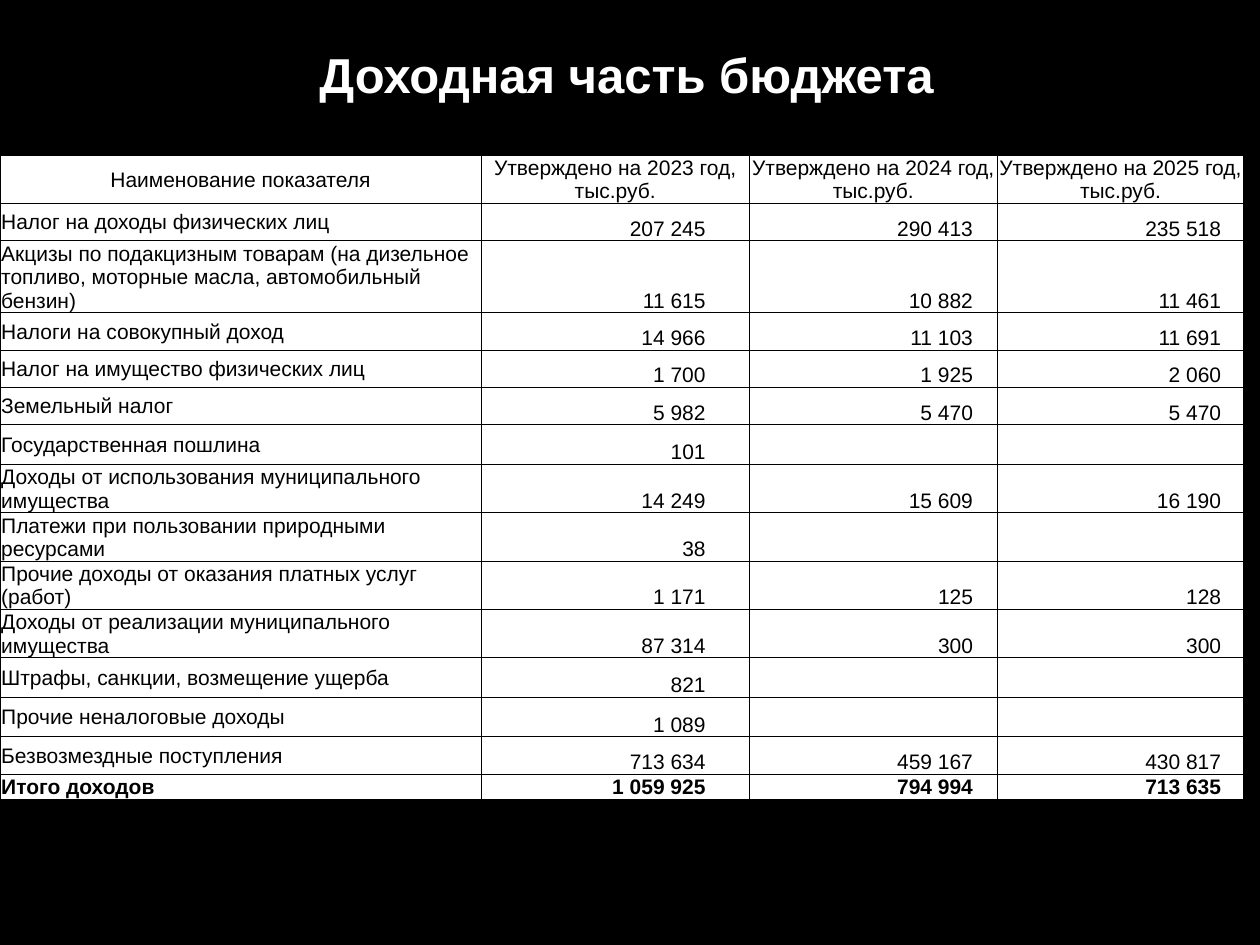
import pptx
import pptx.dml.color
import pptx.enum.text
import pptx.oxml
import pptx.oxml.ns
import pptx.util

Pt = pptx.util.Pt
ALIGN = pptx.enum.text.PP_ALIGN
ANCHOR = pptx.enum.text.MSO_ANCHOR

BLACK = pptx.dml.color.RGBColor(0x00, 0x00, 0x00)
WHITE = pptx.dml.color.RGBColor(0xFF, 0xFF, 0xFF)
FONT = "Arial"

COLUMN_WIDTHS = [275, 153.2, 141.8, 140.8]
NUMBER_INDENTS = [25, 14, 13]
HEADER_HEIGHT = 24.5
ROW_HEIGHT = 21.4
TOTAL_HEIGHT = 12.2
CELL_MARGIN = 0.7

HEADER = ["Наименование показателя"] + [
    f"Утверждено на {year} год, тыс.руб." for year in (2023, 2024, 2025)
]
INCOME = [
    ("Налог на доходы физических лиц", "207 245", "290 413", "235 518"),
    ("Акцизы по подакцизным товарам (на дизельное топливо, моторные масла, "
     "автомобильный бензин)", "11 615", "10 882", "11 461"),
    ("Налоги на совокупный доход", "14 966", "11 103", "11 691"),
    ("Налог на имущество физических лиц", "1 700", "1 925", "2 060"),
    ("Земельный налог", "5 982", "5 470", "5 470"),
    ("Государственная пошлина", "101", "", ""),
    ("Доходы от использования муниципального имущества", "14 249", "15 609", "16 190"),
    ("Платежи при пользовании природными ресурсами", "38", "", ""),
    ("Прочие доходы от оказания платных услуг (работ)", "1 171", "125", "128"),
    ("Доходы от реализации муниципального имущества", "87 314", "300", "300"),
    ("Штрафы, санкции, возмещение ущерба", "821", "", ""),
    ("Прочие неналоговые доходы", "1 089", "", ""),
    ("Безвозмездные поступления", "713 634", "459 167", "430 817"),
]
TOTAL = ("Итого доходов", "1 059 925", "794 994", "713 635")


def add_run(paragraph, text, size, color, bold=False):
    run = paragraph.add_run()
    run.text = text
    run.font.name = FONT
    run.font.size = Pt(size)
    run.font.bold = bold
    run.font.color.rgb = color


def add_title(slide, text):
    title = slide.shapes.title
    title.left, title.top, title.width, title.height = Pt(34), Pt(16.5), Pt(648), Pt(52)
    title.text_frame.vertical_anchor = ANCHOR.MIDDLE
    paragraph = title.text_frame.paragraphs[0]
    paragraph.alignment = ALIGN.CENTER
    add_run(paragraph, text, 28, WHITE, bold=True)


def set_borders(cell):
    properties = cell._tc.get_or_add_tcPr()
    for side in ("lnL", "lnR", "lnT", "lnB"):
        properties.append(pptx.oxml.parse_xml(
            f'<a:{side} {pptx.oxml.ns.nsdecls("a")} w="{Pt(0.5)}">'
            f'<a:solidFill><a:srgbClr val="{BLACK}"/></a:solidFill></a:{side}>'
        ))


def fill_cell(cell, text, alignment, anchor, bold=False, right_margin=CELL_MARGIN):
    set_borders(cell)
    cell.fill.solid()
    cell.fill.fore_color.rgb = WHITE
    cell.margin_left = cell.margin_top = Pt(CELL_MARGIN)
    cell.margin_right = Pt(right_margin)
    cell.margin_bottom = 0
    cell.vertical_anchor = anchor
    if text:
        paragraph = cell.text_frame.paragraphs[0]
        paragraph.alignment = alignment
        add_run(paragraph, text, 12, BLACK, bold)


def fill_data_row(cells, values, bold=False):
    label, *numbers = values
    fill_cell(cells[0], label, ALIGN.LEFT, ANCHOR.MIDDLE, bold)
    for cell, number, indent in zip(cells[1:], numbers, NUMBER_INDENTS):
        fill_cell(cell, number, ALIGN.RIGHT, ANCHOR.BOTTOM, bold, indent)


def add_income_table(slide):
    heights = [HEADER_HEIGHT] + [ROW_HEIGHT] * len(INCOME) + [TOTAL_HEIGHT]
    table = slide.shapes.add_table(
        len(heights), len(COLUMN_WIDTHS),
        0, Pt(88.6), Pt(sum(COLUMN_WIDTHS)), Pt(sum(heights)),
    ).table
    table.first_row = table.horz_banding = False
    for column, width in zip(table.columns, COLUMN_WIDTHS):
        column.width = Pt(width)
    for row, height in zip(table.rows, heights):
        row.height = Pt(height)

    rows = [list(row.cells) for row in table.rows]
    for cell, text in zip(rows[0], HEADER):
        fill_cell(cell, text, ALIGN.CENTER, ANCHOR.MIDDLE)
    for cells, values in zip(rows[1:], INCOME):
        fill_data_row(cells, values)
    fill_data_row(rows[-1], TOTAL, bold=True)


def main():
    presentation = pptx.Presentation()
    presentation.slide_width, presentation.slide_height = Pt(720), Pt(540)
    slide = presentation.slides.add_slide(presentation.slide_layouts[5])
    slide.background.fill.solid()
    slide.background.fill.fore_color.rgb = BLACK
    add_title(slide, "Доходная часть бюджета")
    add_income_table(slide)
    presentation.save("out.pptx")


if __name__ == "__main__":
    main()
